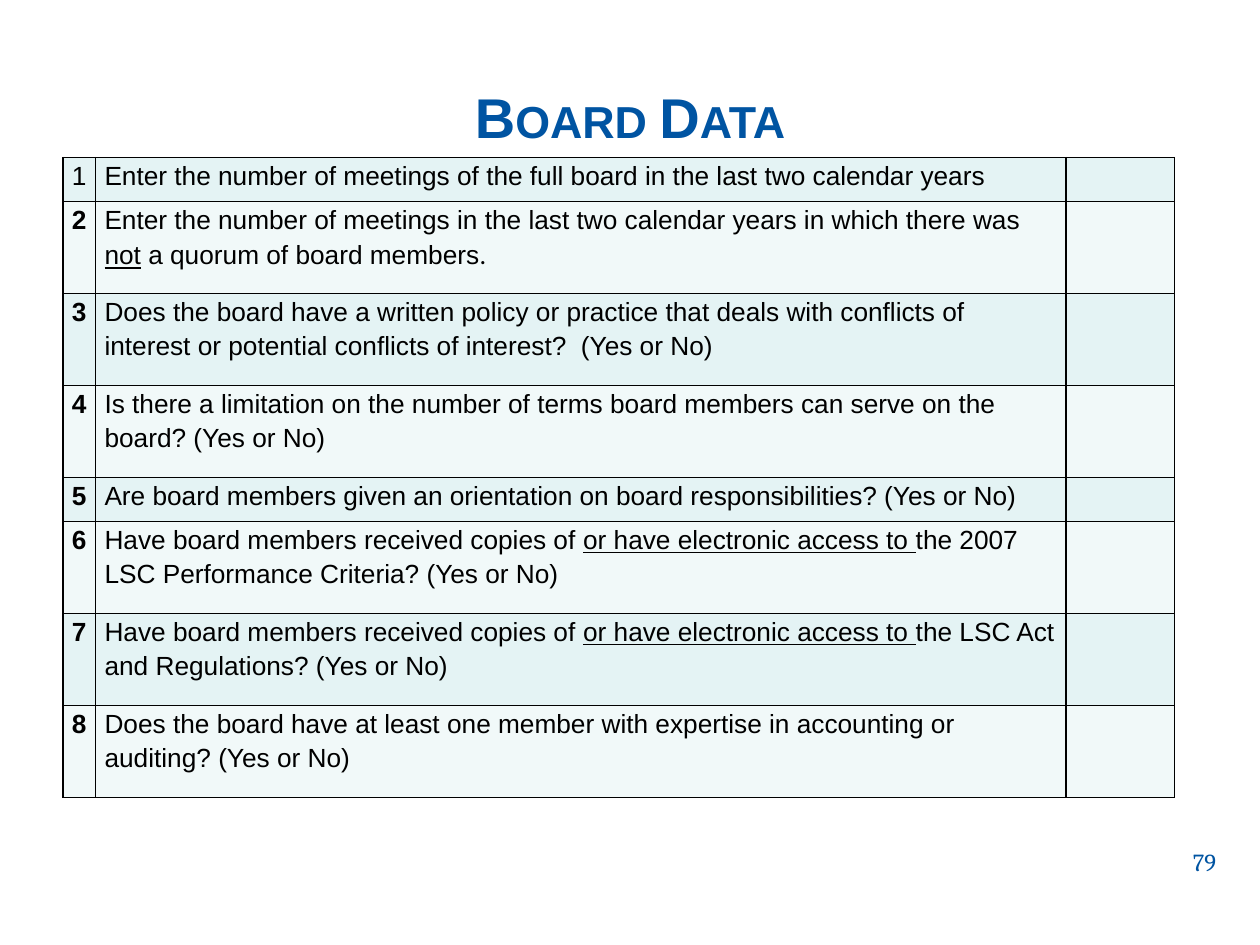
from dataclasses import dataclass

from lxml import etree
from pptx import Presentation
from pptx import util as u
from pptx.dml import color
from pptx.enum import text
from pptx.oxml import ns


@dataclass(frozen=True)
class Theme:
    blue: str = "0054A2"
    black: str = "000000"
    bands: tuple = ("E4F3F4", "F1F9F9")
    font: str = "Arial"
    stop_font: str = "Calibri"
    number_font: str = "Cambria"
    title_size: int = 32
    table_size: int = 15
    number_size: int = 14
    border_width: int = 1
    line_spacing: float = 1.15
    cell_margin: float = 0.07


COLUMNS, ROWS = 100, 75
ACCESS = ("or have electronic access to ", "underline")
COPIES = "Have board members received copies of "
QUESTIONS = [
    ["Enter the number of meetings of the full board in the last two calendar years"],
    ["Enter the number of meetings in the last two calendar years in which there was ",
     ("not", "underline"), " a quorum of board members", (".", "stop")],
    ["Does the board have a written policy or practice that deals with conflicts of "
     "interest or potential conflicts of interest?  (Yes or No)"],
    ["Is there a limitation on the number of terms board members can serve on the "
     "board? (Yes or No)"],
    ["Are board members given an orientation on board responsibilities? (Yes or No)"],
    [COPIES, ACCESS, "the 2007 LSC Performance Criteria? (Yes or No)"],
    [COPIES, ACCESS, "the LSC Act and Regulations? (Yes or No)"],
    ["Does the board have at least one member with expertise in accounting or "
     "auditing? (Yes or No)"],
]
SINGLE_LINE_ROWS = (0, 4)
SHORT_ROW, TALL_ROW = 3.5, 7.3


class SlideBuilder:
    def __init__(self, presentation, theme):
        self.theme = theme
        self.column = presentation.slide_width / COLUMNS
        self.row = presentation.slide_height / ROWS
        self.slide = presentation.slides.add_slide(presentation.slide_layouts[6])

    def place(self, left, top, width, height):
        return (round(left * self.column), round(top * self.row),
                round(width * self.column), round(height * self.row))

    def style(self, run, size, hue, font=None, bold=False):
        run.font.name = font or self.theme.font
        run.font.size = u.Pt(size)
        run.font.bold = bold
        run.font.color.rgb = color.RGBColor.from_string(hue)

    def label(self, words, box, size, font, alignment, anchor, bold=False, small_caps=False):
        frame = self.slide.shapes.add_textbox(*self.place(*box)).text_frame
        frame.word_wrap = True
        frame.vertical_anchor = anchor
        frame.text = words
        paragraph = frame.paragraphs[0]
        paragraph.alignment = alignment
        run = paragraph.runs[0]
        self.style(run, size, self.theme.blue, font, bold)
        if small_caps:
            run.font._element.set("cap", "small")

    def cell(self, cell, parts, fill, bold=False):
        theme = self.theme
        cell.margin_top = cell.margin_bottom = 0
        cell.margin_left = cell.margin_right = u.Inches(theme.cell_margin)
        self.borders(cell)
        cell.fill.solid()
        cell.fill.fore_color.rgb = color.RGBColor.from_string(fill)
        paragraph = cell.text_frame.paragraphs[0]
        paragraph.line_spacing = theme.line_spacing
        for part in parts:
            words, kind = (part, "plain") if isinstance(part, str) else part
            run = paragraph.add_run()
            run.text = words
            font = theme.stop_font if kind == "stop" else theme.font
            self.style(run, theme.table_size, theme.black, font, bold)
            run.font.underline = kind == "underline"

    def borders(self, cell):
        properties = cell._tc.get_or_add_tcPr()
        for side in ("lnL", "lnR", "lnT", "lnB"):
            line = etree.SubElement(properties, ns.qn(f"a:{side}"),
                                    w=str(u.Pt(self.theme.border_width)))
            fill = etree.SubElement(line, ns.qn("a:solidFill"))
            etree.SubElement(fill, ns.qn("a:srgbClr"), val=self.theme.black)

    def questionnaire(self, questions, left, top, widths, heights):
        box = self.place(left, top, sum(widths), sum(heights))
        table = self.slide.shapes.add_table(len(questions), len(widths), *box).table
        table.first_row = table.horz_banding = False
        for column, width in zip(table.columns, widths):
            column.width = round(width * self.column)
        for index, (row, height) in enumerate(zip(table.rows, heights)):
            row.height = round(height * self.row)
            fill = self.theme.bands[index % 2]
            number, question, answer = row.cells
            self.cell(number, [str(index + 1)], fill, bold=index > 0)
            self.cell(question, questions[index], fill)
            self.cell(answer, [], fill)


def main():
    presentation = Presentation()
    presentation.slide_width, presentation.slide_height = u.Inches(10), u.Inches(7.5)
    theme = Theme()
    builder = SlideBuilder(presentation, theme)
    builder.label("Board Data", (0, 3, COLUMNS, 12.5), theme.title_size, theme.font,
                  text.PP_ALIGN.CENTER, text.MSO_ANCHOR.MIDDLE, bold=True, small_caps=True)
    heights = [SHORT_ROW if index in SINGLE_LINE_ROWS else TALL_ROW
               for index in range(len(QUESTIONS))]
    builder.questionnaire(QUESTIONS, 5, 12.5, (2.6, 77, 8.6), heights)
    builder.label("79", (76.7, 66.7, 20.8, 5), theme.number_size, theme.number_font,
                  text.PP_ALIGN.RIGHT, text.MSO_ANCHOR.TOP)
    presentation.save("out.pptx")


if __name__ == "__main__":
    main()
